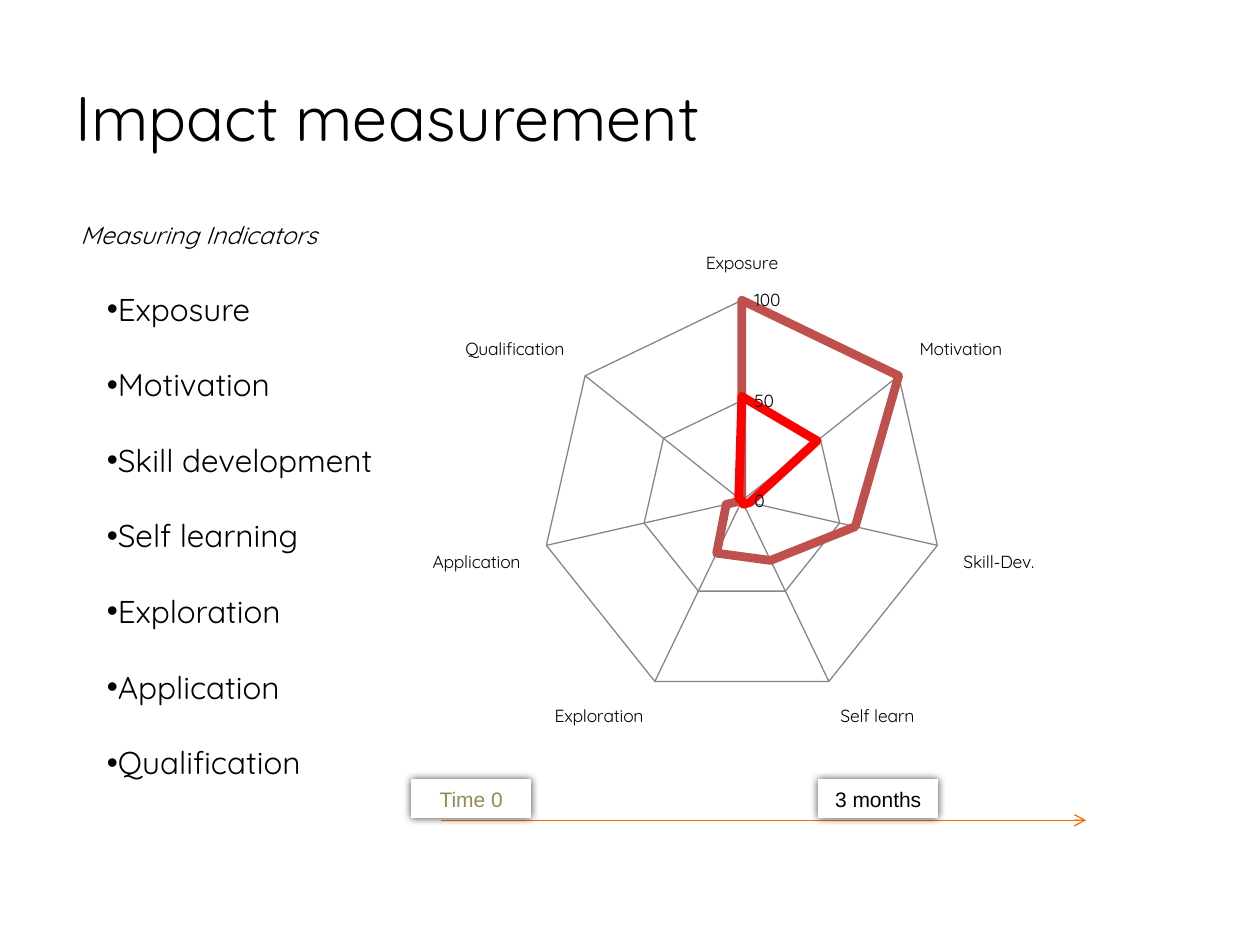
import pptx
import pptx.chart.data
import pptx.dml.color
import pptx.enum.chart
import pptx.enum.shapes
import pptx.enum.text
import pptx.oxml
import pptx.oxml.ns
import pptx.util

Inches = pptx.util.Inches
Pt = pptx.util.Pt
RGB = pptx.dml.color.RGBColor
ALIGN = pptx.enum.text.PP_ALIGN
ANCHOR = pptx.enum.text.MSO_ANCHOR

BLACK = RGB(0, 0, 0)
WHITE = RGB(255, 255, 255)
ORANGE = RGB(0xFF, 0x66, 0x00)
OLIVE = RGB(0x94, 0x8A, 0x54)
BRICK = RGB(0xC0, 0x50, 0x4D)
RED = RGB(0xFF, 0, 0)
GRID = RGB(0x86, 0x86, 0x86)
FONT = "Quicksand"

TITLE = "Impact measurement"
HEADING = "Measuring Indicators"
INDICATORS = ["Exposure", "Motivation", "Skill development", "Self learning",
              "Exploration", "Application", "Qualification"]
AXES = ["Exposure", "Motivation", "Skill-Dev.", "Self learn",
        "Exploration", "Application", "Qualification"]
SERIES = [("Series 1", (100, 100, 58, 33, 29, 8, 0), BRICK),
          ("Series 2", (52, 48, 4, 2, 0, 0, 2), RED)]
MILESTONES = [("Time 0", 3.27, OLIVE), ("3 months", 6.5, BLACK)]

DRAWING = 'xmlns:a="http://schemas.openxmlformats.org/drawingml/2006/main"'
CHART = 'xmlns:c="http://schemas.openxmlformats.org/drawingml/2006/chart"'
qn = pptx.oxml.ns.qn


def xml(text):
    return pptx.oxml.parse_xml(text)


def write(paragraph, text, size=18, font=FONT, color=BLACK,
          italic=False, align=ALIGN.LEFT):
    paragraph.alignment = align
    run = paragraph.add_run()
    run.text = text
    run.font.size = Pt(size)
    run.font.name = font
    run.font.color.rgb = color
    run.font.italic = italic


def text_frame(slide, left, top, width, height):
    box = slide.shapes.add_textbox(*map(Inches, (left, top, width, height)))
    box.text_frame.word_wrap = False
    return box.text_frame


def add_indicators(slide):
    frame = text_frame(slide, 0.75, 2.25, 2.44, 4.04)
    for number, indicator in enumerate(INDICATORS):
        paragraph = frame.add_paragraph() if number else frame.paragraphs[0]
        properties = paragraph._p.get_or_add_pPr()
        properties.append(xml(f'<a:buFont {DRAWING} typeface="Arial"/>'))
        properties.append(xml(f'<a:buChar {DRAWING} char="•"/>'))
        if number:
            paragraph.space_before = Pt(21.6)
        write(paragraph, indicator)


def add_radar(slide):
    data = pptx.chart.data.CategoryChartData()
    data.categories = AXES
    for name, values, _ in SERIES:
        data.add_series(name, values)
    chart = slide.shapes.add_chart(
        pptx.enum.chart.XL_CHART_TYPE.RADAR,
        *map(Inches, (2.4, 1.86, 6.84, 4.03)), data).chart
    chart.has_legend = False
    chart.has_title = False
    chart.font.name = FONT
    chart.font.size = Pt(10)
    chart.font.color.rgb = BLACK
    scale = chart.value_axis
    scale.minimum_scale, scale.maximum_scale, scale.major_unit = 0, 100, 50
    for axis in (chart.category_axis, scale):
        axis.has_major_gridlines = True
        axis.major_gridlines.format.line.color.rgb = GRID
        axis.format.line.color.rgb = GRID
        axis.major_tick_mark = pptx.enum.chart.XL_TICK_MARK.NONE
        axis.minor_tick_mark = pptx.enum.chart.XL_TICK_MARK.NONE
    scale.tick_label_position = pptx.enum.chart.XL_TICK_LABEL_POSITION.HIGH
    scale.tick_labels.number_format = "0"
    scale.tick_labels.number_format_is_linked = False
    for series, (_, _, color) in zip(chart.plots[0].series, SERIES):
        series.smooth = False
        series.format.line.color.rgb = color
        series.format.line.width = Pt(5)
    plot_area = chart._chartSpace.chart.plotArea
    for layout in plot_area.findall(qn("c:layout")):
        plot_area.remove(layout)
    plot_area.insert(0, xml(
        f'<c:layout {CHART}><c:manualLayout><c:layoutTarget val="inner"/>'
        '<c:xMode val="edge"/><c:yMode val="edge"/><c:x val="0.27"/>'
        '<c:y val="0.13"/><c:w val="0.48"/><c:h val="0.79"/>'
        '</c:manualLayout></c:layout>'))


def add_timeline(slide):
    arrow = slide.shapes.add_connector(
        pptx.enum.shapes.MSO_CONNECTOR.STRAIGHT,
        *map(Inches, (3.5, 6.51, 8.62, 6.51)))
    arrow.line.color.rgb = ORANGE
    arrow.line.width = Pt(0.75)
    arrow.line._get_or_add_ln().append(
        xml(f'<a:tailEnd {DRAWING} type="arrow"/>'))
    arrow._element.spPr.append(xml(f'<a:effectLst {DRAWING}/>'))
    for label, left, color in MILESTONES:
        card = slide.shapes.add_shape(
            pptx.enum.shapes.MSO_SHAPE.RECTANGLE,
            *map(Inches, (left, 6.19, 0.94, 0.3)))
        card.fill.solid()
        card.fill.fore_color.rgb = WHITE
        card.line.color.rgb = WHITE
        card.line.width = Pt(0.75)
        card._element.spPr.append(xml(
            f'<a:effectLst {DRAWING}><a:outerShdw blurRad="63500" dist="0">'
            '<a:srgbClr val="000000"><a:alpha val="75000"/></a:srgbClr>'
            '</a:outerShdw></a:effectLst>'))
        card.text_frame.word_wrap = True
        write(card.text_frame.paragraphs[0], label, size=12, font="Arial",
              color=color, align=ALIGN.CENTER)


def main():
    deck = pptx.Presentation()
    deck.slide_width, deck.slide_height = Inches(10), Inches(7.5)
    slide = deck.slides.add_slide(deck.slide_layouts[5])

    title = slide.shapes.title
    title.left, title.top = Inches(0.5), Inches(0.3)
    title.width, title.height = Inches(9), Inches(1.25)
    title.text_frame.vertical_anchor = ANCHOR.MIDDLE
    write(title.text_frame.paragraphs[0], TITLE, size=36)

    heading = text_frame(slide, 0.54, 1.7, 2.17, 0.34)
    write(heading.paragraphs[0], HEADING, size=14, italic=True)
    add_indicators(slide)
    add_radar(slide)
    add_timeline(slide)
    deck.save("out.pptx")


if __name__ == "__main__":
    main()
